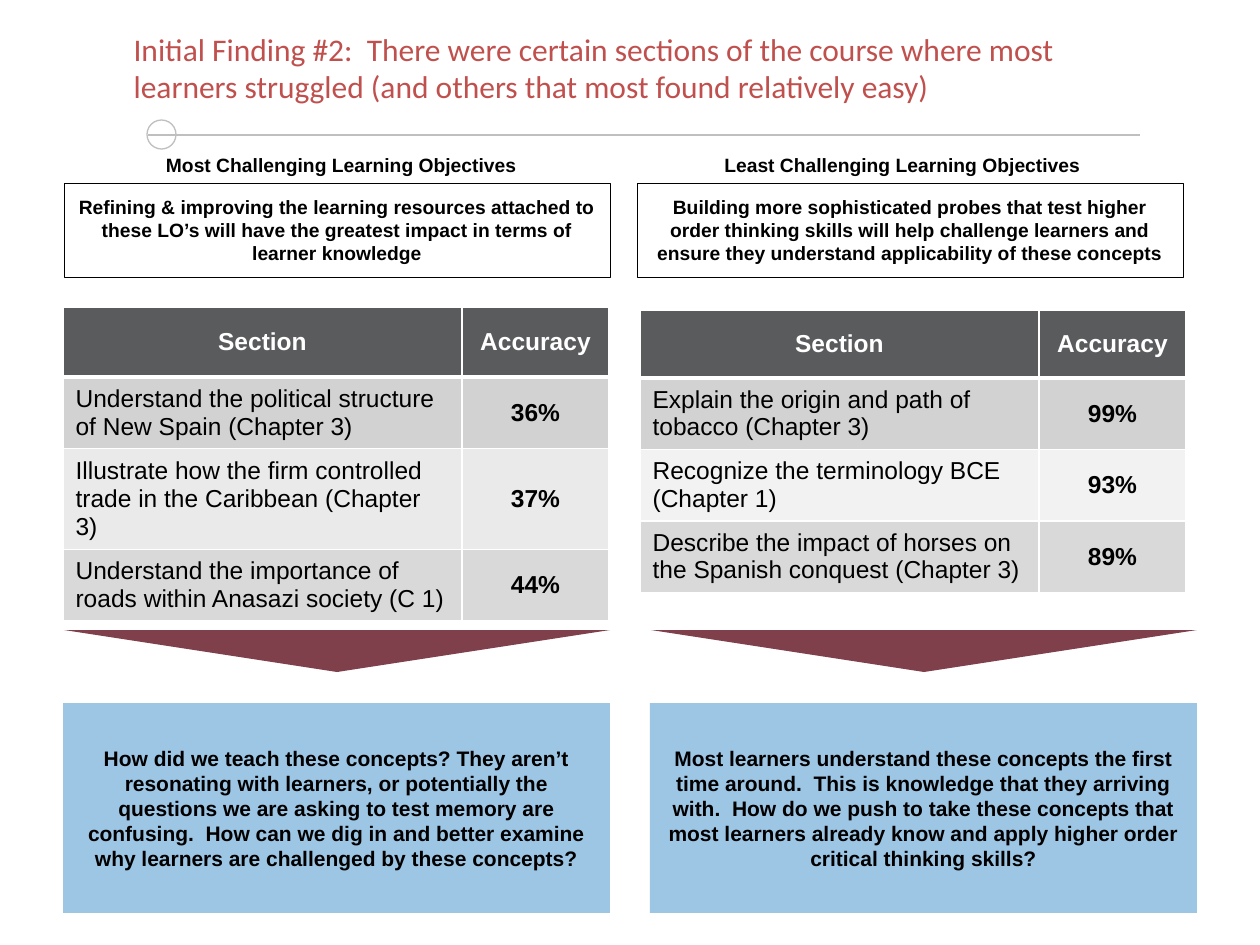
import pptx
import pptx.chart
import pptx.dml.color
import pptx.enum.shapes
import pptx.enum.text
import pptx.oxml
import pptx.oxml.ns
import pptx.util

PX = 914400 / 126
ALIGN = pptx.enum.text.PP_ALIGN
MIDDLE = pptx.enum.text.MSO_ANCHOR.MIDDLE
SHAPE = pptx.enum.shapes.MSO_SHAPE

COLUMNS = [
    {
        "heading": "Most Challenging Learning Objectives",
        "heading_at": (126, 147, 431, 37),
        "action": "Refining & improving the learning resources attached to these LO’s will have the greatest impact in terms of learner knowledge",
        "action_left": 64,
        "table_at": (63, 307),
        "row_height": 70,
        "middle_fill": "EAEAEA",
        "sections": [
            ("Understand the political structure of New Spain (Chapter 3)", "36%"),
            ("Illustrate how the firm controlled trade in the Caribbean (Chapter 3)", "37%"),
            ("Understand the importance of roads within Anasazi society (C 1)", "44%"),
        ],
        "arrow_left": 64,
        "question": "How did we teach these concepts? They aren’t resonating with learners, or potentially the questions we are asking to test memory are confusing.  How can we dig in and better examine why learners are challenged by these concepts?",
        "question_left": 63,
    },
    {
        "heading": "Least Challenging Learning Objectives",
        "heading_at": (661, 147, 483, 37),
        "action": "Building more sophisticated probes that test higher order thinking skills will help challenge learners and ensure they understand applicability of these concepts",
        "action_left": 637,
        "table_at": (640, 310),
        "row_height": 68,
        "middle_fill": "F2F2F2",
        "sections": [
            ("Explain the origin and path of tobacco (Chapter 3)", "99%"),
            ("Recognize the terminology BCE (Chapter 1)", "93%"),
            ("Describe the impact of horses on the Spanish conquest (Chapter 3)", "89%"),
        ],
        "arrow_left": 651,
        "question": "Most learners understand these concepts the first time around.  This is knowledge that they arriving with.  How do we push to take these concepts that most learners already know and apply higher order critical thinking skills?",
        "question_left": 650,
    },
]


def px(*lengths):
    return [round(length * PX) for length in lengths]


def rgb(value):
    return pptx.dml.color.RGBColor.from_string(value)


def write(frame, text, size=11, color="000000", bold=True, font="Arial", align=ALIGN.CENTER):
    para = frame.paragraphs[0]
    para.alignment = align
    span = para.add_run()
    span.text = text
    span.font.name = font
    span.font.size = pptx.util.Pt(size)
    span.font.bold = bold
    span.font.color.rgb = rgb(color)


class Page:
    gray = "BFBFBF"

    def __init__(self, deck):
        self.page = deck.slides.add_slide(deck.slide_layouts[5])
        self.shapes = self.page.shapes

    def title(self, text, at):
        box = self.shapes.title
        box.left, box.top, box.width, box.height = px(*at)
        box.text_frame.word_wrap = True
        box.text_frame.auto_size = pptx.enum.text.MSO_AUTO_SIZE.NONE
        box.text_frame.vertical_anchor = MIDDLE
        write(box.text_frame, text, size=18, color="C0504D", bold=False,
              font="Calibri", align=ALIGN.LEFT)

    def line(self, start, end):
        rule = self.shapes.add_connector(
            pptx.enum.shapes.MSO_CONNECTOR.STRAIGHT, *px(*start, *end))
        rule.line.color.rgb = rgb(self.gray)
        rule.line.width = pptx.util.Pt(0.75)
        properties = rule._element.spPr
        properties.append(pptx.oxml.parse_xml(
            "<a:effectLst %s/>" % pptx.oxml.ns.nsdecls("a")))

    def shape(self, kind, at, fill=None, line=None, width=0.75, text=None, size=11, turn=0):
        box = self.shapes.add_shape(kind, *px(*at))
        box.shadow.inherit = False
        box.rotation = turn
        if fill:
            box.fill.solid()
            box.fill.fore_color.rgb = rgb(fill)
        else:
            box.fill.background()
        if line:
            box.line.color.rgb = rgb(line)
            box.line.width = pptx.util.Pt(width)
        else:
            box.line.fill.background()
        if text:
            box.text_frame.word_wrap = True
            box.text_frame.vertical_anchor = MIDDLE
            write(box.text_frame, text, size=size)

    def label(self, text, at):
        box = self.shapes.add_textbox(*px(*at))
        box.text_frame.word_wrap = True
        write(box.text_frame, text)

    def borders(self, cell, top, bottom):
        properties = cell._tc.get_or_add_tcPr()
        widths = {"lnL": 1, "lnR": 1, "lnT": top, "lnB": bottom}
        for place, (side, points) in enumerate(widths.items()):
            properties.insert(place, pptx.oxml.parse_xml(
                '<a:%s %s w="%d"><a:solidFill><a:srgbClr val="FFFFFF"/></a:solidFill></a:%s>'
                % (side, pptx.oxml.ns.nsdecls("a"), pptx.util.Pt(points), side)))

    def table(self, rows, at, widths, row_height, fills):
        size = (sum(widths), row_height * len(rows))
        grid = self.shapes.add_table(len(rows), len(widths), *px(*at, *size)).table
        for column, width in zip(grid.columns, px(*widths)):
            column.width = width
        for r, row in enumerate(rows):
            grid.rows[r].height = px(row_height)[0]
            for c, text in enumerate(row):
                cell = grid.cell(r, c)
                cell.fill.solid()
                cell.fill.fore_color.rgb = rgb(fills[r])
                cell.vertical_anchor = MIDDLE
                centred = r == 0 or c == 1
                write(cell.text_frame, text, size=14, bold=centred,
                      color="FFFFFF" if r == 0 else "000000",
                      align=ALIGN.CENTER if centred else ALIGN.LEFT)
                self.borders(cell, 3 if r == 1 else 1, 3 if r == 0 else 1)


def main():
    deck = pptx.Presentation()
    deck.slide_width, deck.slide_height = px(1260, 945)
    page = Page(deck)
    page.line((1140, 135), (148, 135))
    page.shape(SHAPE.OVAL, (147, 120, 29, 29), line=page.gray)
    page.title("Initial Finding #2:  There were certain sections of the course where most "
               "learners struggled (and others that most found relatively easy)",
               (121, 19, 1023, 97))
    for column in COLUMNS:
        page.label(column["heading"], column["heading_at"])
        page.shape(SHAPE.RECTANGLE, (column["action_left"], 183, 546, 94),
                   line="000000", width=0.25, text=column["action"])
        page.table([("Section", "Accuracy")] + column["sections"], column["table_at"],
                   (399, 147), column["row_height"],
                   ("5A5B5D", "D2D2D2", column["middle_fill"], "D9D9D9"))
        page.shape(SHAPE.ISOSCELES_TRIANGLE, (column["arrow_left"], 630, 546, 42),
                   fill="80404B", turn=180)
        page.shape(SHAPE.RECTANGLE, (column["question_left"], 703, 547, 210),
                   fill="9DC5E4", text=column["question"], size=12)
    deck.save("out.pptx")


if __name__ == "__main__":
    main()
